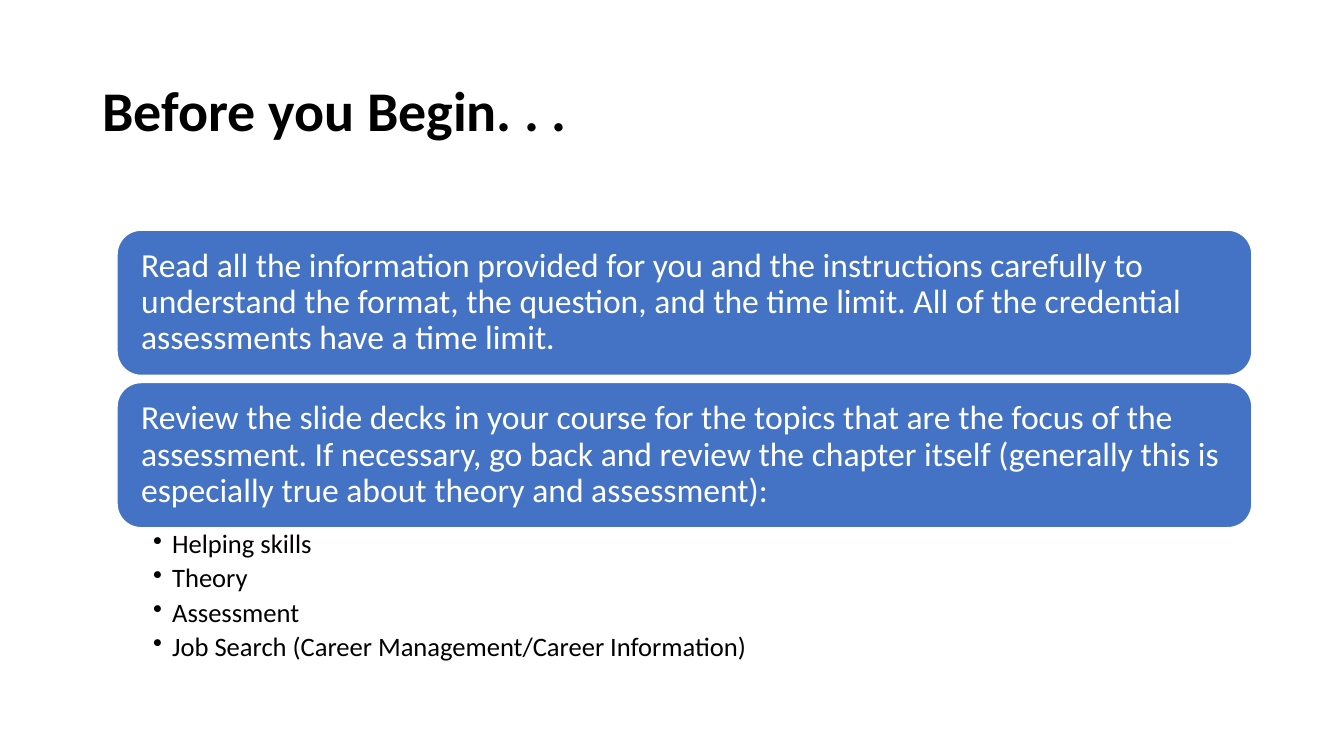
import pptx
import pptx.util
import pptx.dml.color
import pptx.enum.shapes
import pptx.enum.text
import pptx.oxml.ns
from lxml import etree

Cm = pptx.util.Cm
Pt = pptx.util.Pt
Anchor = pptx.enum.text.MSO_ANCHOR

TITLE = "Before you Begin. . ."
STEPS = [
    "Read all the information provided for you and the instructions carefully "
    "to understand the format, the question, and the time limit. All of the "
    "credential assessments have a time limit.",
    "Review the slide decks in your course for the topics that are the focus "
    "of the assessment. If necessary, go back and review the chapter itself "
    "(generally this is especially true about theory and assessment):",
]
TOPICS = [
    "Helping skills",
    "Theory",
    "Assessment",
    "Job Search (Career Management/Career Information)",
]


def color(code):
    return pptx.dml.color.RGBColor.from_string(code)


def add_bullet(para, indent):
    props = para._p.get_or_add_pPr()
    props.set("marL", str(indent))
    props.set("indent", str(-indent))
    mark = etree.SubElement(props, pptx.oxml.ns.qn("a:buChar"))
    mark.set("char", "•")


def write(shape, text, size=24, ink="000000", bold=False, anchor=Anchor.MIDDLE,
          inset=(0.25, 0.13, 0.25, 0.13), after=0, bullet=None):
    """Fill a shape with text, one paragraph per line; lengths in cm."""
    frame = shape.text_frame
    frame.word_wrap = True
    frame.vertical_anchor = anchor
    (frame.margin_left, frame.margin_top,
     frame.margin_right, frame.margin_bottom) = map(Cm, inset)
    for i, line in enumerate(text.split("\n")):
        para = frame.add_paragraph() if i else frame.paragraphs[0]
        if bullet:
            add_bullet(para, Cm(bullet))
        para.alignment = pptx.enum.text.PP_ALIGN.LEFT
        para.line_spacing = 0.9
        para.space_after = Pt(after)
        run = para.add_run()
        run.text = line
        run.font.name = "Calibri"
        run.font.size = Pt(size)
        run.font.bold = bold
        run.font.color.rgb = color(ink)


def add_text(slide, box, text, **style):
    write(slide.shapes.add_textbox(*map(Cm, box)), text, **style)


def add_card(slide, box, text):
    card = slide.shapes.add_shape(
        pptx.enum.shapes.MSO_SHAPE.ROUNDED_RECTANGLE, *map(Cm, box))
    card.shadow.inherit = False
    card.fill.solid()
    card.fill.fore_color.rgb = color("4472C4")
    card.line.color.rgb = color("FFFFFF")
    card.line.width = Pt(1)
    write(card, text, ink="FFFFFF", inset=(0.43,) * 4)


def add_steps(slide, box):
    """Stack the cards, then the topic list, in equal rows."""
    left, top, width, height = box
    gap = 0.18
    row = (height - gap) / 3
    for i, step in enumerate(STEPS):
        add_card(slide, (left, top + i * (row + gap), width, row), step)
    # Topics sit right below the last card
    add_text(slide, (left, top + 2 * row + gap, width, row), "\n".join(TOPICS),
             size=19, anchor=Anchor.TOP, inset=(0.91, 0.08, 0.48, 0.08),
             after=3.8, bullet=0.48)


def main():
    deck = pptx.Presentation()
    deck.slide_width, deck.slide_height = Cm(33.87), Cm(19.05)
    slide = deck.slides.add_slide(deck.slide_layouts[6])
    # Title
    add_text(slide, (2.33, 1.01, 29.21, 3.68), TITLE, size=40, bold=True)
    # Steps and topics
    add_steps(slide, (2.95, 5.8, 28.6, 11.16))
    deck.save("out.pptx")


if __name__ == "__main__":
    main()
